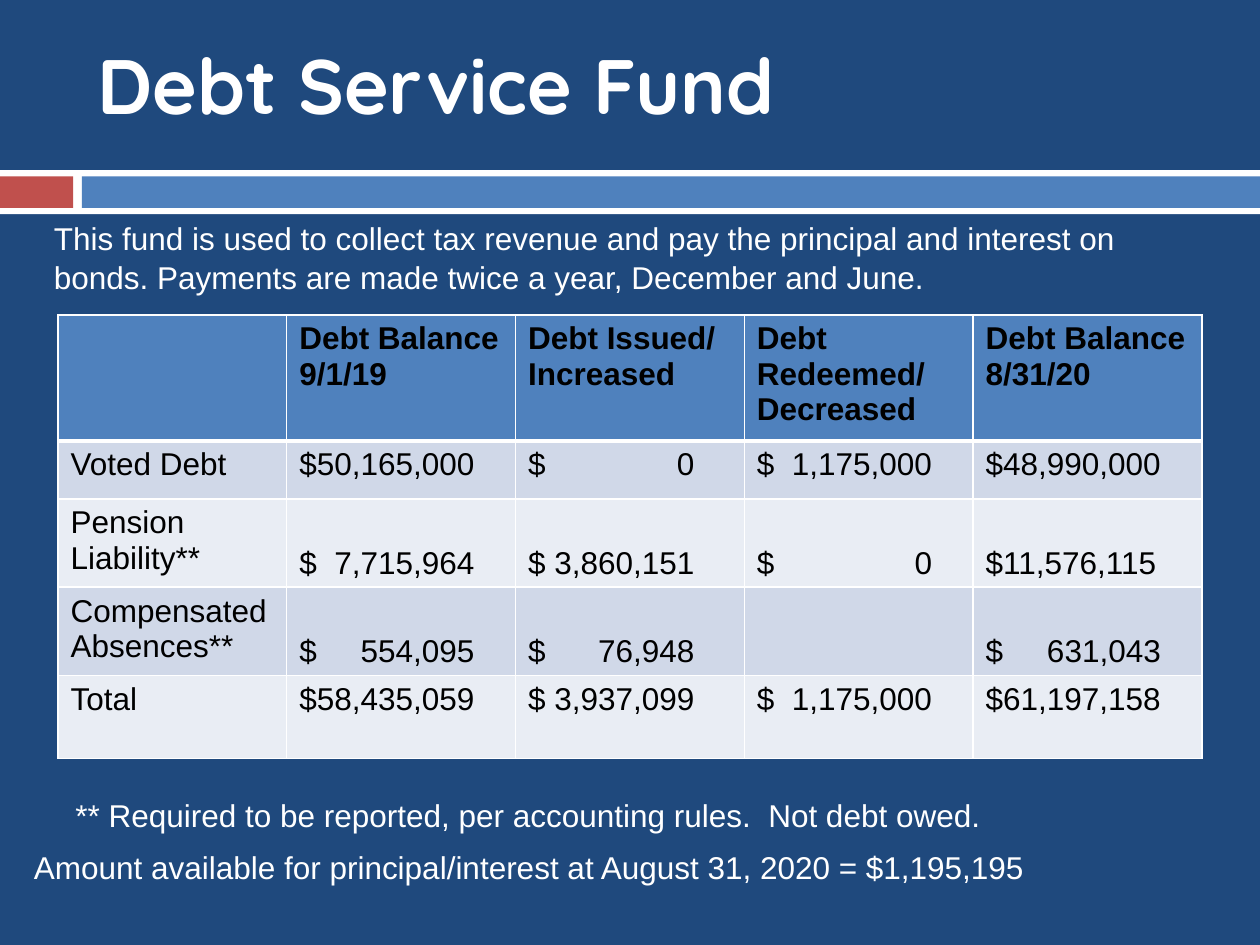
import pptx
import pptx.util
import pptx.oxml
import pptx.oxml.ns
import pptx.dml.color
import pptx.enum.shapes
import pptx.enum.text

Inches = pptx.util.Inches
Pt = pptx.util.Pt
Anchor = pptx.enum.text.MSO_ANCHOR

COLORS = {
    "navy": "1F497D",
    "white": "FFFFFF",
    "black": "000000",
    "red": "C0504D",
    "blue": "4F81BD",
    "dark band": "D0D8E8",
    "light band": "E9EDF4",
}

TITLE = "Debt Service Fund"
BARS = [
    ("white", 0, 1.35, 10, 0.35),
    ("red", 0, 1.4, 0.58, 0.25),
    ("blue", 0.65, 1.4, 9.35, 0.25),
]
NOTES = [
    ("This fund is used to collect tax revenue and pay the principal and "
     "interest on bonds. Payments are made twice a year, December and June.",
     0.33, 1.67, 9.33, 0.71),
    ("Amount available for principal/interest at August 31, 2020 = $1,195,195",
     0.17, 6.67, 9.33, 0.4),
    ("** Required to be reported, per accounting rules.  Not debt owed.",
     0.5, 6.25, 9, 0.4),
]
# A tab sets the dollar sign apart from an amount aligned on the right.
ROWS = [
    ["", "Debt Balance 9/1/19", "Debt Issued/\nIncreased",
     "Debt Redeemed/\nDecreased", "Debt Balance 8/31/20"],
    ["Voted Debt", "$50,165,000", "$\t0", "$\t1,175,000", "$48,990,000"],
    ["Pension Liability**", "$\t7,715,964", "$\t3,860,151", "$\t0",
     "$11,576,115"],
    ["Compensated Absences**", "$\t554,095", "$\t76,948", "", "$\t631,043"],
    ["Total", "$58,435,059", "$\t3,937,099", "$\t1,175,000", "$61,197,158"],
]
HEIGHTS = [1, 0.46, 0.7, 0.7, 0.66]
LOW_ROWS = (2, 3)
TABS = [None, 1.39, 1.32, 1.39, 1.39]
LEFT, TOP, WIDTH = 0.46, 2.5, 9.08


def rgb(name):
    return pptx.dml.color.RGBColor.from_string(COLORS[name])


def paint(fill, name):
    fill.solid()
    fill.fore_color.rgb = rgb(name)


def style(frame, color, size=18, face="Arial", bold=False):
    for para in frame.paragraphs:
        font = para.font
        font.name, font.size, font.bold = face, Pt(size), bold
        font.color.rgb = rgb(color)


def add_tab(para, stop):
    """Set a right tab stop, in inches from the start of the text."""
    para._p.get_or_add_pPr().insert(0, pptx.oxml.parse_xml(
        f'<a:tabLst {pptx.oxml.ns.nsdecls("a")}>'
        f'<a:tab pos="{Inches(stop)}" algn="r"/></a:tabLst>'))


def add_edges(cell, heavy):
    """Draw white cell borders; heavy names the sides that are 3 pt wide."""
    props = cell._tc.get_or_add_tcPr()
    for spot, side in enumerate("LRTB"):
        width = Pt(3 if side in heavy else 1)
        props.insert(spot, pptx.oxml.parse_xml(
            f'<a:ln{side} {pptx.oxml.ns.nsdecls("a")} w="{width}"><a:solidFill>'
            f'<a:srgbClr val="{COLORS["white"]}"/></a:solidFill></a:ln{side}>'))


def add_bar(slide, color, *box):
    bar = slide.shapes.add_shape(
        pptx.enum.shapes.MSO_SHAPE.RECTANGLE, *map(Inches, box))
    paint(bar.fill, color)
    bar.line.fill.background()
    bar.shadow.inherit = False


def add_title(slide):
    title = slide.shapes.title
    title.left, title.top = Inches(0.67), Inches(0)
    title.width, title.height = Inches(8.67), Inches(1.33)
    frame = title.text_frame
    frame.text = TITLE
    frame.vertical_anchor = Anchor.MIDDLE
    frame.paragraphs[0].alignment = pptx.enum.text.PP_ALIGN.LEFT
    style(frame, "white", 44, "Quicksand", True)


def add_note(slide, text, *box):
    frame = slide.shapes.add_textbox(*map(Inches, box)).text_frame
    frame.word_wrap = True
    frame.text = text
    frame.paragraphs[0].line_spacing = 1.05
    style(frame, "white")


def add_debts(slide):
    count = len(ROWS[0])
    table = slide.shapes.add_table(
        len(ROWS), count, Inches(LEFT), Inches(TOP),
        Inches(WIDTH), Inches(sum(HEIGHTS))).table
    for col in table.columns:
        col.width = Inches(WIDTH / count)
    for r, (texts, height) in enumerate(zip(ROWS, HEIGHTS)):
        table.rows[r].height = Inches(height)
        band = "blue" if r == 0 else "dark band" if r % 2 else "light band"
        for c, text in enumerate(texts):
            cell = table.cell(r, c)
            cell.text = text
            paint(cell.fill, band)
            add_edges(cell, {0: "B", 1: "T"}.get(r, ""))
            style(cell.text_frame, "black", bold=r == 0)
            if "\t" in text:
                add_tab(cell.text_frame.paragraphs[0], TABS[c])
            if r in LOW_ROWS and c > 0:
                cell.vertical_anchor = Anchor.BOTTOM


def main():
    deck = pptx.Presentation()
    deck.slide_width, deck.slide_height = Inches(10), Inches(7.5)
    slide = deck.slides.add_slide(deck.slide_layouts[5])
    paint(slide.background.fill, "navy")
    for bar in BARS:
        add_bar(slide, *bar)
    add_title(slide)
    for note in NOTES:
        add_note(slide, *note)
    add_debts(slide)
    deck.save("out.pptx")


if __name__ == "__main__":
    main()
